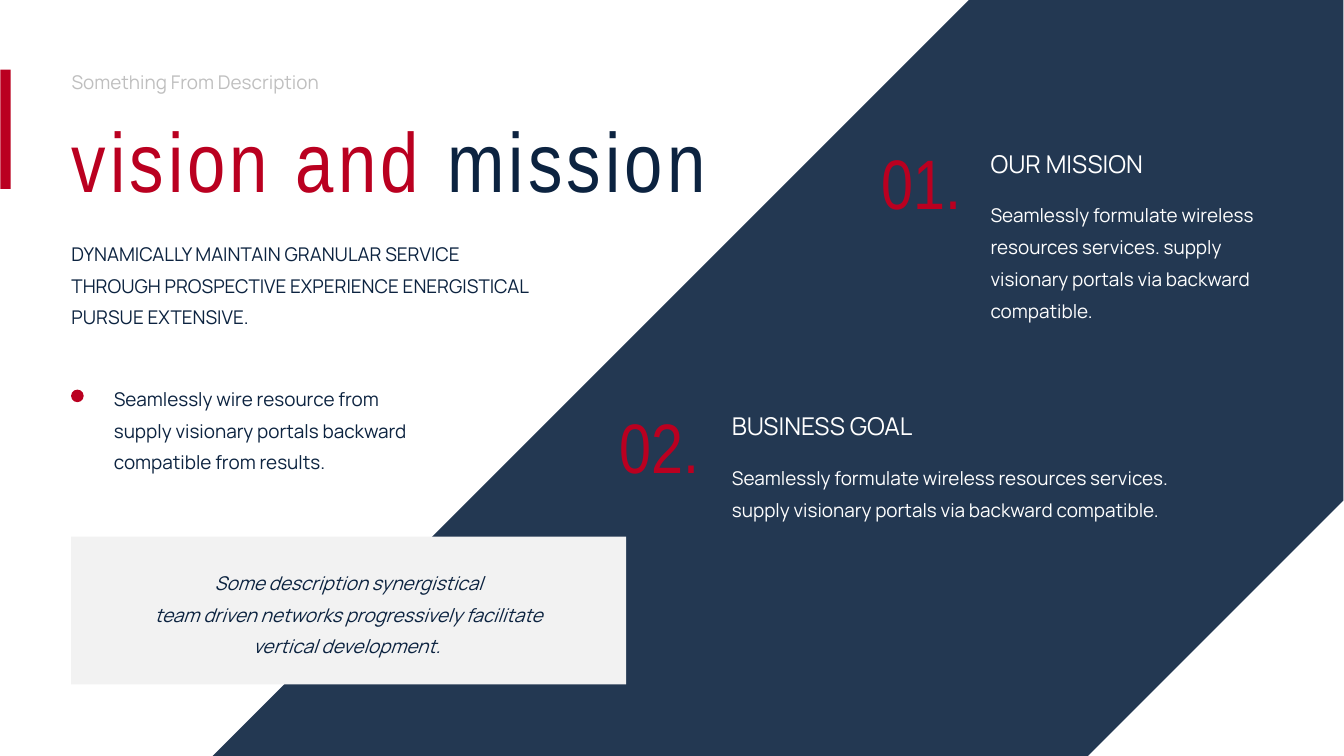
from lxml import etree
from pptx import Presentation
from pptx.dml.color import RGBColor
from pptx.enum.shapes import MSO_SHAPE
from pptx.enum.text import MSO_ANCHOR, MSO_AUTO_SIZE, PP_ALIGN
from pptx.oxml.ns import qn
from pptx.util import Inches, Pt

RECTANGLE, OVAL = MSO_SHAPE.RECTANGLE, MSO_SHAPE.OVAL
LEFT, CENTER = PP_ALIGN.LEFT, PP_ALIGN.CENTER
TOP, GROW = MSO_ANCHOR.TOP, MSO_AUTO_SIZE.SHAPE_TO_FIT_TEXT

COLORS = {"navy": "0C2340", "red": "BA0020", "silver": "BFBFBF",
          "pale": "F2F2F2", "white": "FFFFFF"}

# Run formats: font attributes, with the colour given by name
DISPLAY = {"name": "Arial Narrow", "size": Pt(120), "bold": False, "color": "red"}
NUMBER = {**DISPLAY, "size": Pt(100)}
BODY = {"name": "Manrope", "size": Pt(27), "color": "navy"}
WHITE_BODY = {**BODY, "color": "white"}
HEADING = {**WHITE_BODY, "size": Pt(35)}

# Paragraph formats
TIGHT = {"line_spacing": 0.8, "alignment": LEFT}
TIGHT_CENTERED = {"line_spacing": 0.8, "alignment": CENTER}
LOOSE = {"line_spacing": 1.4, "alignment": LEFT}
LOOSE_AFTER_GAP = {**LOOSE, "space_before": Pt(24)}
QUOTE = {**LOOSE_AFTER_GAP, "alignment": CENTER}

# Content
TITLE_RUNS = [("vision and", DISPLAY), (" mission", {**DISPLAY, "color": "navy"})]
TITLE_BOX = (1.32, 2.48, 13.56, 1.82)
TITLE_SPACING = 6  # points between letters

BAND_POINTS = [(19.22, 0), (26.65, 0), (26.65, 9.93), (21.58, 15), (4.22, 15)]
BAND_OPACITY = 90  # percent

SUBTITLE = "Something From Description"
INTRODUCTION = ("DYNAMICALLY MAINTAIN GRANULAR SERVICE THROUGH PROSPECTIVE "
                "EXPERIENCE ENERGISTICAL PURSUE EXTENSIVE.")
QUOTE_TEXT = ("Some description synergistical\nteam driven networks "
              "progressively facilitate vertical development. ")
BULLET_TEXT = ("Seamlessly wire resource from \nsupply visionary portals "
               "backward compatible from results.")
GOAL_TEXT = ("Seamlessly formulate wireless resources services. "
             "supply visionary portals via backward compatible.")

# Number, heading, number position, text box
GOALS = [
    ("02.", "BUSINESS GOAL", (11.25, 8.27), (14.42, 7.88, 9.02, 3.12)),
    ("01.", "OUR MISSION", (16.44, 3.05), (19.55, 2.67, 5.89, 3.75)),
]
NUMBER_SIZE = (3.68, 1.53)


def inches(values):
    return [Inches(value) for value in values]


def rgb(color):
    return RGBColor.from_string(COLORS[color])


def apply_format(target, format_values):
    for attribute, value in format_values.items():
        if attribute == "color":
            target.color.rgb = rgb(value)
        else:
            setattr(target, attribute, value)


def write_text(shape, paragraphs):
    """Fill a shape with (paragraph format, [(text, run format), ...]) items."""
    frame = shape.text_frame
    apply_format(frame, {"word_wrap": True, "auto_size": GROW, "vertical_anchor": TOP})
    for index, (paragraph_format, runs) in enumerate(paragraphs):
        paragraph = frame.add_paragraph() if index else frame.paragraphs[0]
        apply_format(paragraph, paragraph_format)
        for text, run_format in runs:
            for line_index, line in enumerate(text.split("\n")):
                if line_index:
                    paragraph.add_line_break()
                run = paragraph.add_run()
                run.text = line
                apply_format(run.font, run_format)


def add_text(shapes, box, *paragraphs):
    write_text(shapes.add_textbox(*inches(box)), paragraphs)


def paint(shape, color):
    shape.shadow.inherit = False
    shape.fill.solid()
    shape.fill.fore_color.rgb = rgb(color)
    shape.line.fill.background()


def add_block(shapes, kind, box, color):
    paint(shapes.add_shape(kind, *inches(box)), color)


def add_title(slide):
    title = slide.shapes.title
    apply_format(title, dict(zip(("left", "top", "width", "height"), inches(TITLE_BOX))))
    write_text(title, [(TIGHT, TITLE_RUNS)])
    for run in title.text_frame.paragraphs[0].runs:
        run.font._element.set("spc", str(TITLE_SPACING * 100))


def add_band(shapes):
    points = [tuple(inches(point)) for point in BAND_POINTS]
    builder = shapes.build_freeform(*points[0], scale=1.0)
    builder.add_line_segments(points[1:], close=True)
    band = builder.convert_to_shape()
    paint(band, "navy")
    color_element = band._element.spPr.find(qn("a:solidFill"))[0]
    etree.SubElement(color_element, qn("a:alpha")).set("val", str(BAND_OPACITY * 1000))


def add_goal(shapes, number, heading, number_position, text_box):
    group = shapes.add_group_shape().shapes
    add_text(group, number_position + NUMBER_SIZE, (TIGHT_CENTERED, [(number, NUMBER)]))
    add_text(group, text_box, (LOOSE, [(heading, HEADING)]),
             (LOOSE_AFTER_GAP, [(GOAL_TEXT, WHITE_BODY)]))


def main():
    presentation = Presentation()
    presentation.slide_width = Inches(26.66)
    presentation.slide_height = Inches(15)
    slide = presentation.slides.add_slide(presentation.slide_layouts[5])
    shapes = slide.shapes

    add_band(shapes)
    add_title(slide)
    add_text(shapes, (1.32, 1.17, 8.92, 0.71),
             (LOOSE, [(SUBTITLE, {**BODY, "color": "silver"})]))
    add_block(shapes, RECTANGLE, (0.01, 1.38, 0.2, 2.37), "red")
    add_text(shapes, (1.32, 4.58, 9.6, 1.96), (LOOSE, [(INTRODUCTION, BODY)]))

    add_block(shapes, RECTANGLE, (1.41, 10.65, 11.01, 2.93), "pale")
    add_text(shapes, (2.37, 11.11, 9.09, 1.96),
             (QUOTE, [(QUOTE_TEXT, {**BODY, "italic": True})]))

    bullet = shapes.add_group_shape().shapes
    add_text(bullet, (2.16, 7.46, 7.23, 1.96), (LOOSE, [(BULLET_TEXT, BODY)]))
    add_block(bullet, OVAL, (1.41, 7.73, 0.25, 0.25), "red")

    for goal in GOALS:
        add_goal(shapes, *goal)

    presentation.save("out.pptx")


if __name__ == "__main__":
    main()
